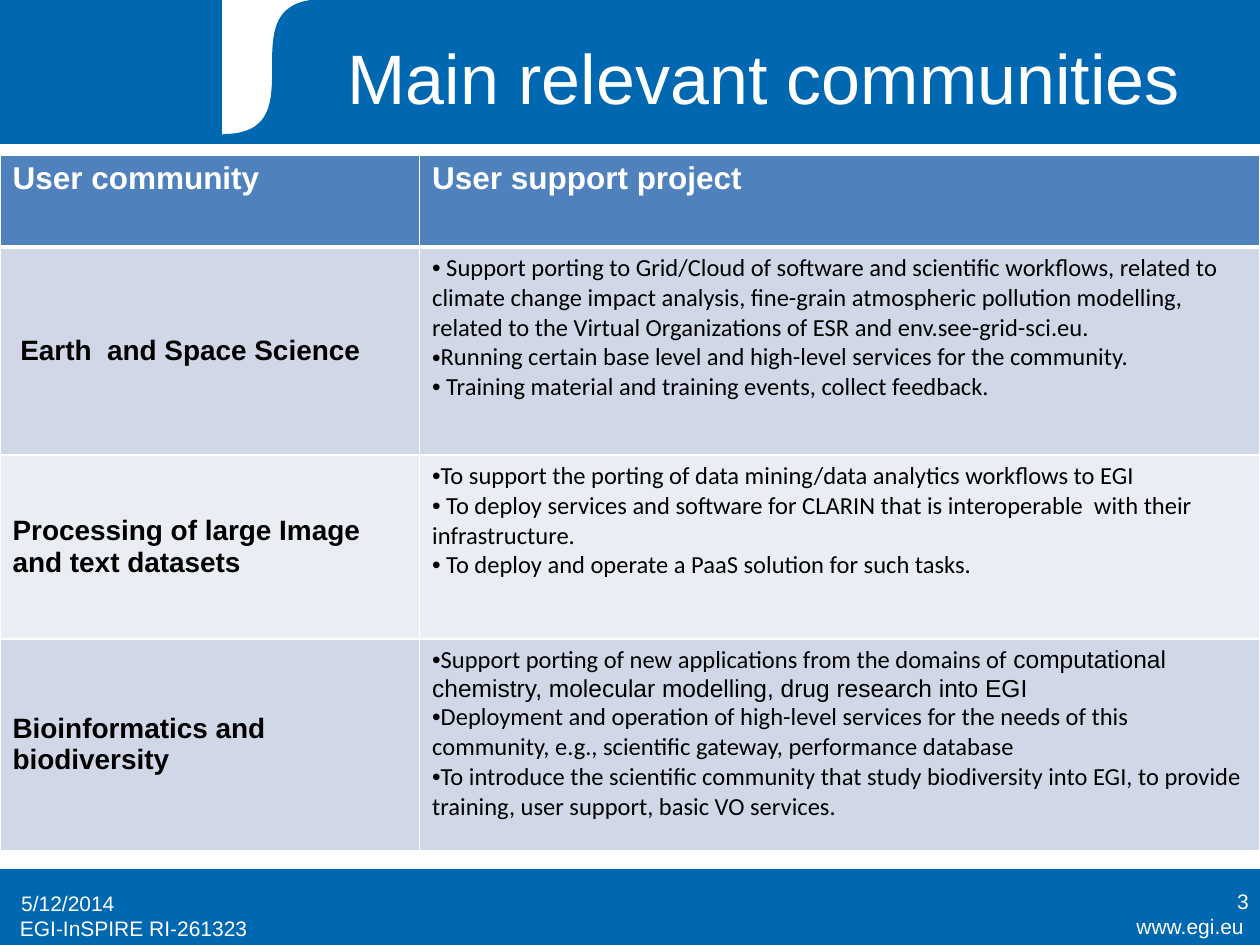
"""Build the slide on the main relevant user communities."""
from lxml.etree import SubElement
from pptx import Presentation
from pptx.dml.color import RGBColor
from pptx.enum.shapes import MSO_SHAPE
from pptx.enum.text import MSO_ANCHOR, PP_ALIGN
from pptx.oxml.ns import qn
from pptx.util import Inches, Pt

BLUE = RGBColor(0x00, 0x67, 0xB1)
HEADER_BLUE = RGBColor(0x4F, 0x81, 0xBD)
BANDS = (RGBColor(0xD0, 0xD8, 0xE8), RGBColor(0xE9, 0xED, 0xF4))
WHITE = RGBColor(0xFF, 0xFF, 0xFF)
BLACK = RGBColor(0x00, 0x00, 0x00)

TITLE_ONLY = 5
COLUMN_SHARES = (33.3, 66.7)
ROW_SHARES = (9.73, 22, 19.47, 22.4)
HEADINGS = ("User community", "User support project")
COMMUNITIES = (
    (" Earth  and Space Science", (
        " Support porting to Grid/Cloud of software and scientific workflows, related to climate "
        "change impact analysis, fine-grain atmospheric pollution modelling, related to the "
        "Virtual Organizations of ESR and env.see-grid-sci.eu.",
        "Running certain base level and high-level services for the community.",
        " Training material and training events, collect feedback.")),
    ("Processing of large Image and text datasets", (
        "To support the porting of data mining/data analytics workflows to EGI",
        " To deploy services and software for CLARIN that is interoperable  with their "
        "infrastructure.",
        " To deploy and operate a PaaS solution for such tasks.")),
    ("Bioinformatics and biodiversity", (
        ("Support porting of new applications from the domains of ",
         "computational chemistry, molecular modelling, drug research into EGI"),
        "Deployment and operation of high-level services for the needs of this community, e.g., "
        "scientific gateway, performance database",
        "To introduce the scientific community that study biodiversity into EGI, to provide "
        "training, user support, basic VO services.")),
)


def write(paragraph, text, size=12, font="Arial", color=WHITE, bold=False, align=PP_ALIGN.LEFT):
    """Add a formatted run of text to a paragraph."""
    paragraph.alignment = align
    run = paragraph.add_run()
    run.text = text
    run.font.size = Pt(size)
    run.font.name = font
    run.font.bold = bold
    run.font.color.rgb = color


def add_bullet(paragraph):
    """Give a paragraph a round bullet without an indent."""
    properties = paragraph._p.get_or_add_pPr()
    properties.set("marL", "0")
    properties.set("indent", "0")
    SubElement(properties, qn("a:buFont"), typeface="Arial")
    SubElement(properties, qn("a:buChar"), char="•")


def add_borders(cell, **widths):
    """Draw white cell borders, one point wide unless a side says otherwise."""
    properties = cell._tc.get_or_add_tcPr()
    for side in "LRTB":
        width = Pt(widths.get(side, 1))
        line = SubElement(properties, qn(f"a:ln{side}"), w=str(width))
        fill = SubElement(line, qn("a:solidFill"))
        SubElement(fill, qn("a:srgbClr"), val=str(WHITE))


def bezier(start, first, second, end, steps=40):
    """Return points along a cubic curve."""
    points = []
    for step in range(1, steps + 1):
        t = step / steps
        weights = ((1 - t) ** 3, 3 * t * (1 - t) ** 2, 3 * t ** 2 * (1 - t), t ** 3)
        corners = (start, first, second, end)
        points.append(tuple(sum(w * c[axis] for w, c in zip(weights, corners)) for axis in (0, 1)))
    return points


class SlideBuilder:
    """Hold the slide and place elements in percent of its size."""

    def __init__(self, presentation):
        self.width = presentation.slide_width
        self.height = presentation.slide_height
        self.slide = presentation.slides.add_slide(presentation.slide_layouts[TITLE_ONLY])
        self.shapes = self.slide.shapes

    def x(self, share):
        """Return a share of the slide's width."""
        return round(self.width * share / 100)

    def y(self, share):
        """Return a share of the slide's height."""
        return round(self.height * share / 100)

    def box(self, left, top, width, height):
        """Return a position and size as lengths."""
        return self.x(left), self.y(top), self.x(width), self.y(height)

    def paint(self, shape, color):
        """Fill and outline a shape in one colour."""
        shape.shadow.inherit = False
        shape.fill.solid()
        shape.fill.fore_color.rgb = color
        shape.line.color.rgb = color
        shape.line.width = Pt(0.75)

    def rectangle(self, *place, color):
        """Add a plain rectangle."""
        self.paint(self.shapes.add_shape(MSO_SHAPE.RECTANGLE, *self.box(*place)), color)

    def swoosh(self, left, right, bottom, curve_width, color):
        """Add a panel whose left edge is an S-curve."""
        top_left = (left + curve_width, 0)
        curve = bezier((left, bottom), (left + curve_width, bottom), (left, 0), top_left)
        builder = self.shapes.build_freeform(self.x(right), 0)
        outline = [(right, bottom), (left, bottom), *curve]
        builder.add_line_segments([(self.x(x), self.y(y)) for x, y in outline])
        self.paint(builder.convert_to_shape(), color)

    def title(self, text, *place):
        """Place the title in front of the banner and fill it."""
        title = self.shapes.title
        self.shapes._spTree.append(title._element)
        title.left, title.top, title.width, title.height = self.box(*place)
        title.text_frame.vertical_anchor = MSO_ANCHOR.MIDDLE
        write(title.text_frame.paragraphs[0], text, size=40, align=PP_ALIGN.CENTER)

    def label(self, text, *place, anchor=MSO_ANCHOR.TOP, align=PP_ALIGN.LEFT):
        """Add a footer text."""
        frame = self.shapes.add_textbox(*self.box(*place)).text_frame
        frame.word_wrap = True
        frame.vertical_anchor = anchor
        write(frame.paragraphs[0], text, align=align)

    def cell(self, cell, color, anchor=MSO_ANCHOR.TOP, **borders):
        """Style a table cell and return its text frame."""
        add_borders(cell, **borders)
        cell.fill.solid()
        cell.fill.fore_color.rgb = color
        cell.vertical_anchor = anchor
        return cell.text_frame

    def table(self, left, top):
        """Add the table of communities and their support projects."""
        place = self.box(left, top, sum(COLUMN_SHARES), sum(ROW_SHARES))
        table = self.shapes.add_table(len(ROW_SHARES), len(COLUMN_SHARES), *place).table
        for column, share in zip(table.columns, COLUMN_SHARES):
            column.width = self.x(share)
        for row, share in zip(table.rows, ROW_SHARES):
            row.height = self.y(share)
        for index, heading in enumerate(HEADINGS):
            frame = self.cell(table.cell(0, index), HEADER_BLUE, B=3)
            write(frame.paragraphs[0], heading, size=18, bold=True)
        for row, (community, tasks) in enumerate(COMMUNITIES, start=1):
            band = BANDS[(row - 1) % 2]
            edge = 3 if row == 1 else 1
            frame = self.cell(table.cell(row, 0), band, MSO_ANCHOR.MIDDLE, T=edge)
            write(frame.paragraphs[0], community, size=16, color=BLACK, bold=True)
            self.tasks(self.cell(table.cell(row, 1), band, T=edge), tasks)

    def tasks(self, frame, tasks):
        """Write a bulleted list, with any second part of an item in Arial."""
        for index, task in enumerate(tasks):
            paragraph = frame.add_paragraph() if index else frame.paragraphs[0]
            add_bullet(paragraph)
            parts = (task,) if isinstance(task, str) else task
            for text, font in zip(parts, ("Calibri", "Arial")):
                write(paragraph, text, size=14, font=font, color=BLACK)


def main():
    """Compose and save the slide."""
    presentation = Presentation()
    presentation.slide_width, presentation.slide_height = Inches(10), Inches(7.5)
    builder = SlideBuilder(presentation)
    builder.rectangle(0, 92, 100, 8, color=BLUE)
    builder.rectangle(0, 0, 100, 15.2, color=BLUE)
    builder.rectangle(17.7, 0, 19.7, 14.27, color=WHITE)
    builder.swoosh(17.7, 37.4, 14.27, 7.9, color=BLUE)
    builder.label("www.egi.eu", 83.9, 96, 15.8, 4.13, align=PP_ALIGN.RIGHT)
    builder.label("EGI-InSPIRE RI-261323", 0.6, 96.27, 25, 4.13)
    builder.title("Main relevant communities", 23.2, 1.73, 74.8, 12.67)
    builder.label("5/12/2014", 0.7, 92.93, 23.3, 5.33, anchor=MSO_ANCHOR.MIDDLE)
    builder.label("3", 76.8, 92.67, 23.3, 5.33, anchor=MSO_ANCHOR.MIDDLE, align=PP_ALIGN.RIGHT)
    builder.table(0, 16.4)
    presentation.save("out.pptx")


if __name__ == "__main__":
    main()
